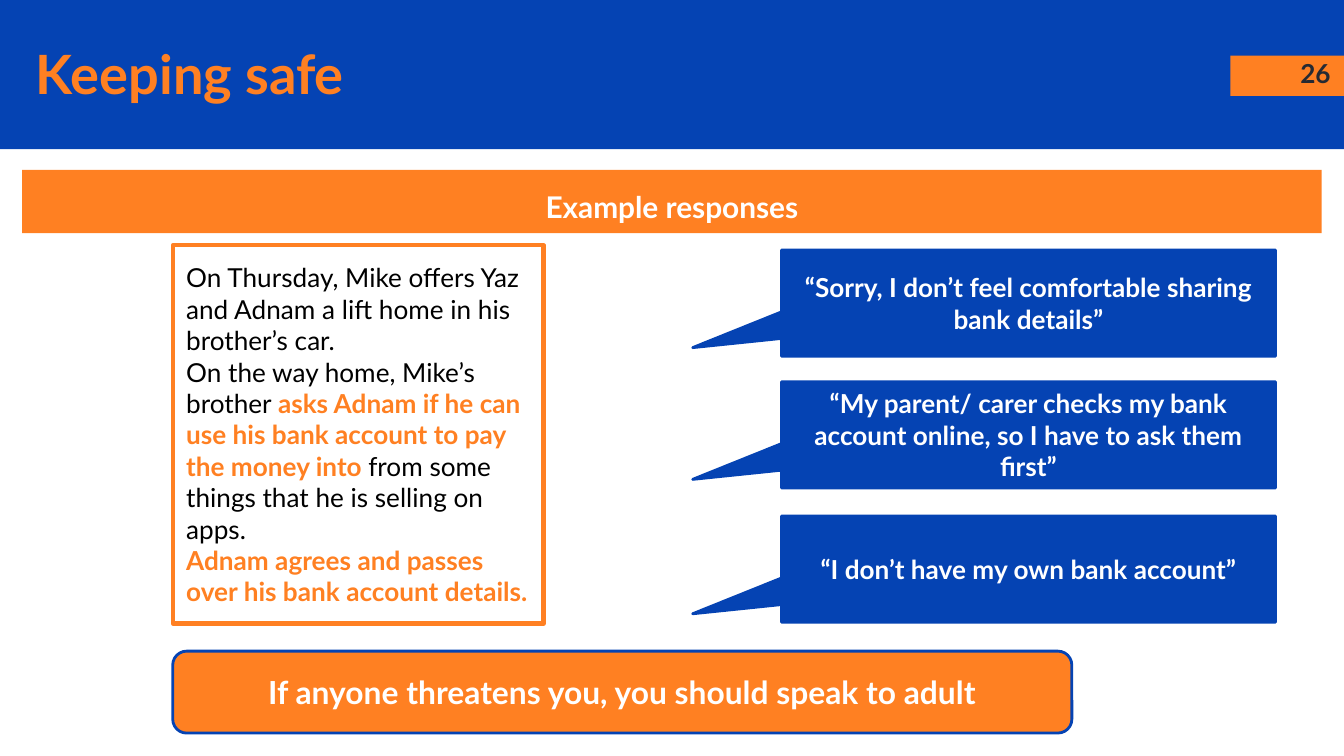
"""Build the "Keeping safe" slide with example responses."""
from dataclasses import dataclass

from lxml import etree
from pptx import Presentation
from pptx.dml.color import RGBColor
from pptx.enum.shapes import MSO_SHAPE
from pptx.enum.text import MSO_ANCHOR, MSO_AUTO_SIZE, PP_ALIGN
from pptx.oxml.ns import qn
from pptx.util import Pt

PX = 4572
BLUE = RGBColor(0x05, 0x43, 0xB3)
ORANGE = RGBColor(0xFF, 0x80, 0x22)
WHITE = RGBColor(0xFF, 0xFF, 0xFF)
BLACK = RGBColor(0, 0, 0)
INK = RGBColor(0x26, 0x2A, 0x33)
FONT = "Lato"
RECTANGLE = MSO_SHAPE.RECTANGLE
ROUNDED = MSO_SHAPE.ROUNDED_RECTANGLE
CALLOUT = MSO_SHAPE.ROUNDED_RECTANGULAR_CALLOUT
LEFT, CENTER, RIGHT = PP_ALIGN.LEFT, PP_ALIGN.CENTER, PP_ALIGN.RIGHT
TOP, MIDDLE = MSO_ANCHOR.TOP, MSO_ANCHOR.MIDDLE
NO_AUTOFIT = MSO_AUTO_SIZE.NONE


@dataclass(frozen=True)
class Area:
    left: int
    top: int
    width: int
    height: int

    def emu(self) -> tuple[int, ...]:
        return tuple(n * PX for n in (self.left, self.top, self.width, self.height))


@dataclass(frozen=True)
class Response:
    top: int
    text: str


@dataclass(frozen=True)
class Span:
    text: str
    strong: bool = False


RESPONSES = (
    Response(372, "“Sorry, I don’t feel comfortable sharing bank details”"),
    Response(568, "“My parent/ carer checks my bank account online, so I have to ask them first”"),
    Response(768, "“I don’t have my own bank account”"),
)
STORY = (
    (Span("On Thursday, Mike offers Yaz and Adnam a lift home in his brother’s car."),),
    (
        Span("On the way home, Mike’s brother "),
        Span("asks Adnam if he can use his bank account to pay the money into ", True),
        Span("from some things that he is selling on apps."),
    ),
    (Span("Adnam agrees and passes over his bank account details.", True),),
)


def place(shape, area: Area) -> None:
    shape.left, shape.top, shape.width, shape.height = area.emu()


def set_frame(frame, anchor=TOP, inset_y: int = 20) -> None:
    frame.word_wrap = True
    frame.auto_size = NO_AUTOFIT
    frame.vertical_anchor = anchor
    frame.margin_left = frame.margin_right = 20 * PX
    frame.margin_top = frame.margin_bottom = inset_y * PX


def add_span(para, text: str, *, size: int, color=WHITE, bold: bool = True) -> None:
    span = para.add_run()
    span.text = text
    span.font.name = FONT
    span.font.size = Pt(size)
    span.font.bold = bold
    span.font.color.rgb = color


def write(shape, text: str, *, size: int, color=WHITE, align=CENTER, anchor=TOP, spacing=1.0) -> None:
    set_frame(shape.text_frame, anchor)
    para = shape.text_frame.paragraphs[0]
    para.alignment = align
    para.line_spacing = spacing
    add_span(para, text, size=size, color=color)


def add_box(page, kind, area: Area, fill, line=None, adjustments=()):
    box = page.shapes.add_shape(kind, *area.emu())
    box.shadow.inherit = False
    box.fill.solid()
    box.fill.fore_color.rgb = fill
    if line is None:
        box.line.fill.background()
    else:
        box.line.color.rgb = line
        box.line.width = Pt(1.5)
    for index, value in enumerate(adjustments):
        box.adjustments[index] = value
    return box


def add_header(page) -> None:
    add_box(page, RECTANGLE, Area(0, 0, 2000, 222), BLUE)
    add_box(page, RECTANGLE, Area(1831, 83, 169, 60), ORANGE)
    number = page.shapes.add_textbox(*Area(1880, 66, 120, 86).emu())
    write(number, "26", size=14, color=INK, align=RIGHT)
    title = page.shapes.title
    place(title, Area(33, 40, 1796, 138))
    write(title, "Keeping safe", size=29, color=ORANGE, align=LEFT)
    title.element.getparent().append(title.element)


def add_story(page) -> None:
    body = page.placeholders[1]
    place(body, Area(257, 365, 552, 563))
    body.line.color.rgb = ORANGE
    body.line.width = Pt(2.25)
    frame = body.text_frame
    set_frame(frame, MIDDLE, inset_y=10)
    for index, spans in enumerate(STORY):
        para = frame.add_paragraph() if index else frame.paragraphs[0]
        para.alignment = LEFT
        para.space_before = Pt(0)
        properties = para._p.get_or_add_pPr()
        properties.set("marL", "0")
        properties.set("indent", "0")
        etree.SubElement(properties, qn("a:buNone"))
        for span in spans:
            color = ORANGE if span.strong else BLACK
            add_span(para, span.text, size=14, color=color, bold=span.strong)


def add_response(page, response: Response) -> None:
    area = Area(1163, response.top, 735, 158)
    box = add_box(page, CALLOUT, area, BLUE, BLUE, (-0.68, 0.42, 0))
    write(box, response.text, size=14, anchor=MIDDLE)


def main() -> None:
    deck = Presentation()
    deck.slide_width, deck.slide_height = 2000 * PX, 1125 * PX
    page = deck.slides.add_slide(deck.slide_layouts[1])
    add_header(page)
    add_story(page)
    banner = add_box(page, RECTANGLE, Area(33, 253, 1934, 94), ORANGE)
    write(banner, "Example responses", size=16, spacing=1.15)
    for response in RESPONSES:
        add_response(page, response)
    advice = add_box(page, ROUNDED, Area(257, 969, 1338, 122), ORANGE, BLUE, (0.17,))
    write(advice, "If anyone threatens you, you should speak to adult", size=17, anchor=MIDDLE)
    deck.save("out.pptx")


if __name__ == "__main__":
    main()
